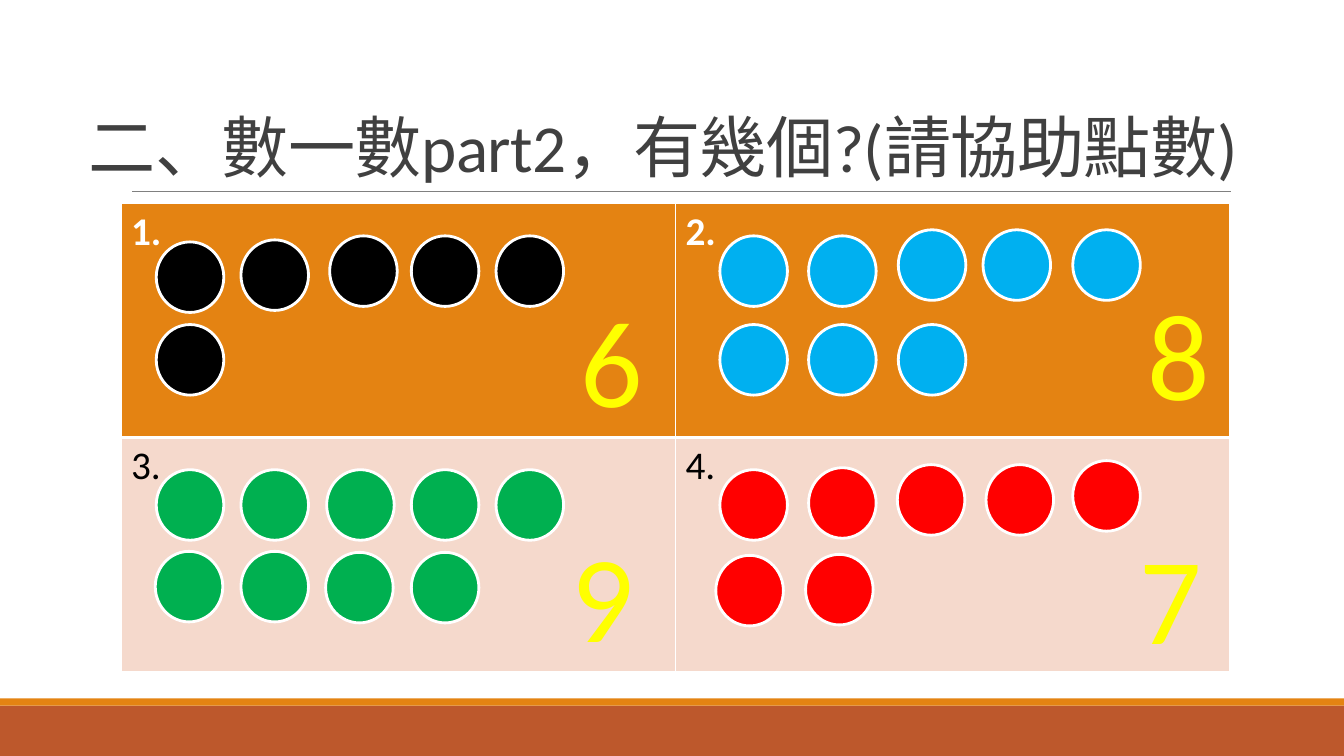
from dataclasses import dataclass

from lxml.etree import SubElement
from pptx import Presentation
from pptx.dml.color import RGBColor
from pptx.enum.shapes import MSO_CONNECTOR, MSO_SHAPE
from pptx.enum.text import MSO_ANCHOR, MSO_AUTO_SIZE, PP_ALIGN
from pptx.oxml.ns import qn
from pptx.slide import Slide
from pptx.table import _Cell as Cell
from pptx.text.text import _Paragraph as Paragraph
from pptx.util import Inches, Pt

FONT = "Calibri"
COLORS = {
    "white": "FFFFFF", "black": "000000", "blue": "00B0F0", "green": "00B050",
    "red": "FF0000", "yellow": "FFFF00", "orange": "E48312", "rust": "BD582C",
    "pink": "F5D9CC", "title": "404040", "rule": "808080",
}
DOT_WIDTH, DOT_HEIGHT = 0.67, 0.7
ANSWER_WIDTH, ANSWER_HEIGHT = 1.14, 1.58


@dataclass(frozen=True)
class Question:
    """One counting cell: its dots and its answer, placed by their top left corners."""
    dot_color: str
    dots: list[tuple[float, float]]
    answer_at: tuple[float, float]
    cell_color: str
    number_color: str
    bold: bool

    @property
    def answer(self) -> str:
        return str(len(self.dots))


QUESTIONS = [
    Question("black", [(1.55, 2.4), (2.39, 2.38), (3.27, 2.34), (4.08, 2.34), (4.92, 2.34),
                       (1.55, 3.22)],
             (5.5, 2.77), "orange", "white", True),
    Question("blue", [(7.14, 2.34), (8.02, 2.34), (8.91, 2.28), (9.75, 2.28), (10.64, 2.28),
                      (7.14, 3.22), (8.02, 3.22), (8.91, 3.22)],
             (11.12, 2.7), "orange", "white", True),
    Question("green", [(1.55, 4.66), (2.39, 4.66), (3.24, 4.66), (4.08, 4.66), (4.92, 4.66),
                       (1.54, 5.47), (2.39, 5.47), (3.23, 5.48), (4.08, 5.48)],
             (5.41, 5.1), "pink", "black", False),
    Question("red", [(7.14, 4.66), (8.02, 4.64), (8.9, 4.61), (9.78, 4.61), (10.64, 4.57),
                     (7.1, 5.51), (7.99, 5.5)],
             (11.04, 5.12), "pink", "black", False),
]


def rgb(name: str) -> RGBColor:
    return RGBColor.from_string(COLORS[name])


def add_run(paragraph: Paragraph, text: str, size: float, color: str, bold: bool = False):
    run = paragraph.add_run()
    run.text = text
    run.font.name = FONT
    run.font.size = Pt(size)
    run.font.bold = bold
    run.font.color.rgb = rgb(color)
    return run


def add_filled(slide: Slide, preset: MSO_SHAPE, left: float, top: float, width: float,
               height: float, color: str, outline: str | None = None) -> None:
    shape = slide.shapes.add_shape(preset, Inches(left), Inches(top), Inches(width), Inches(height))
    shape.shadow.inherit = False
    shape.fill.solid()
    shape.fill.fore_color.rgb = rgb(color)
    if outline:
        shape.line.color.rgb = rgb(outline)
        shape.line.width = Pt(2)
    else:
        shape.line.fill.background()


def add_title_rule(slide: Slide) -> None:
    rule = slide.shapes.add_connector(MSO_CONNECTOR.STRAIGHT, Inches(1.31), Inches(1.9),
                                      Inches(12.21), Inches(1.9))
    rule.line.color.rgb = rgb("rule")
    rule.line.width = Pt(0.5)
    SubElement(rule._element.spPr, qn("a:effectLst"))


def write_title(slide: Slide, text: str) -> None:
    title = slide.shapes.title
    title.left, title.top = Inches(0.78), Inches(0.31)
    title.width, title.height = Inches(11.68), Inches(1.59)
    frame = title.text_frame
    frame.word_wrap = True
    frame.auto_size = MSO_AUTO_SIZE.NONE
    frame.vertical_anchor = MSO_ANCHOR.BOTTOM
    paragraph = frame.paragraphs[0]
    paragraph.alignment = PP_ALIGN.LEFT
    paragraph.line_spacing = 0.85
    run = add_run(paragraph, text, 48, "title")
    run.font._element.set("spc", "-50")


def set_borders(cell: Cell, top: float, bottom: float) -> None:
    """Draw white borders; call before filling, since the schema puts lines first."""
    properties = cell._tc.get_or_add_tcPr()
    for side, width in (("L", 1), ("R", 1), ("T", top), ("B", bottom)):
        line = SubElement(properties, qn(f"a:ln{side}"), w=str(Pt(width)))
        fill = SubElement(line, qn("a:solidFill"))
        SubElement(fill, qn("a:srgbClr"), val=COLORS["white"])


def add_question_table(slide: Slide) -> None:
    table = slide.shapes.add_table(2, 2, Inches(1.2), Inches(2.02), Inches(11), Inches(4.64)).table
    table.horz_banding = False
    for index, question in enumerate(QUESTIONS):
        row, column = divmod(index, 2)
        cell = table.cell(row, column)
        set_borders(cell, top=3 if row else 1, bottom=1 if row else 3)
        cell.fill.solid()
        cell.fill.fore_color.rgb = rgb(question.cell_color)
        add_run(cell.text_frame.paragraphs[0], f"{index + 1}.", 28,
                question.number_color, question.bold)


def add_answer(slide: Slide, question: Question) -> None:
    left, top = question.answer_at
    box = slide.shapes.add_textbox(Inches(left), Inches(top),
                                   Inches(ANSWER_WIDTH), Inches(ANSWER_HEIGHT))
    frame = box.text_frame
    frame.word_wrap = True
    frame.auto_size = MSO_AUTO_SIZE.SHAPE_TO_FIT_TEXT
    paragraph = frame.paragraphs[0]
    paragraph.alignment = PP_ALIGN.CENTER
    add_run(paragraph, question.answer, 88, "yellow")


def main() -> None:
    deck = Presentation()
    deck.slide_width, deck.slide_height = Inches(13.33), Inches(7.5)
    slide = deck.slides.add_slide(deck.slide_layouts[5])

    add_filled(slide, MSO_SHAPE.RECTANGLE, 0, 7, 13.33, 0.5, "rust")
    add_filled(slide, MSO_SHAPE.RECTANGLE, 0, 6.93, 13.33, 0.07, "orange")
    add_title_rule(slide)
    write_title(slide, "二、數一數part2，有幾個?(請協助點數)")
    add_question_table(slide)
    for question in QUESTIONS:
        for left, top in question.dots:
            add_filled(slide, MSO_SHAPE.OVAL, left, top, DOT_WIDTH, DOT_HEIGHT,
                       question.dot_color, "white")
        add_answer(slide, question)

    deck.save("out.pptx")


if __name__ == "__main__":
    main()
